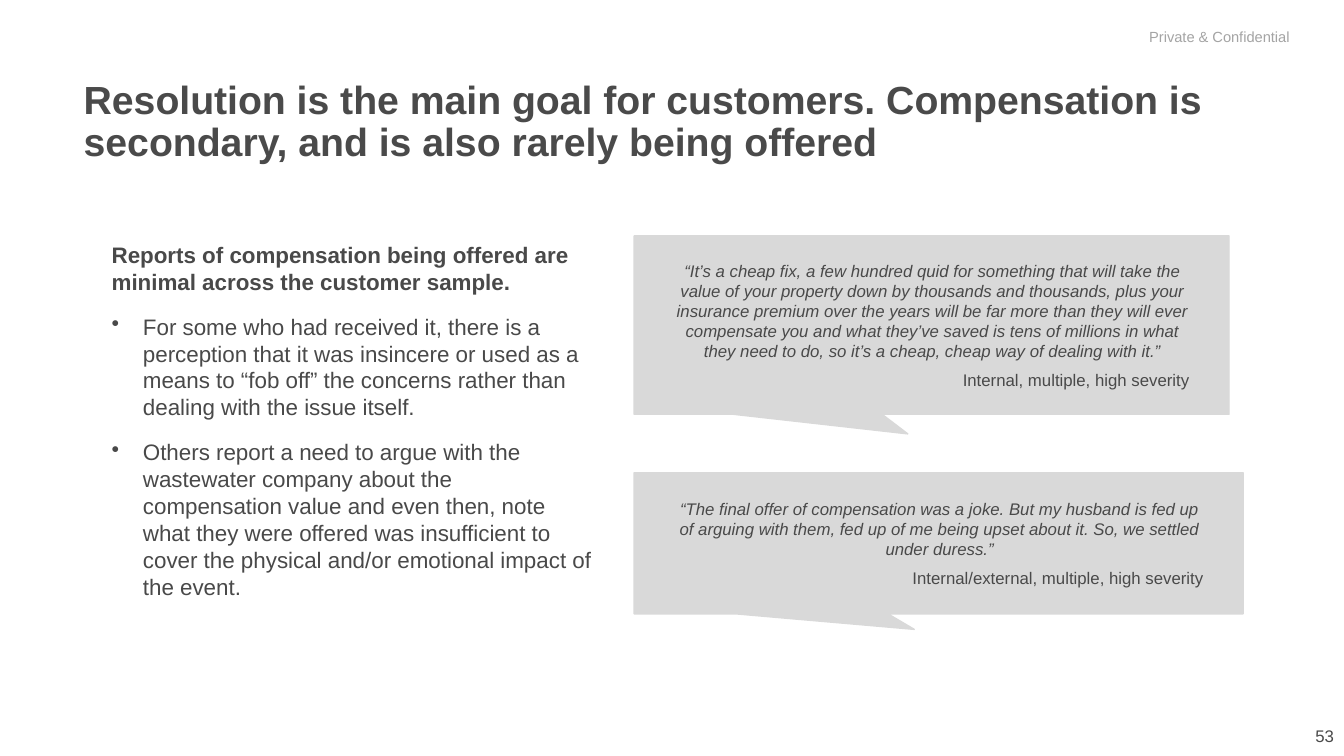
import pptx
import pptx.util
import pptx.dml.color
import pptx.enum.shapes
import pptx.enum.text
import pptx.oxml
import pptx.oxml.ns

Inches, Pt = pptx.util.Inches, pptx.util.Pt
ALIGN = pptx.enum.text.PP_ALIGN
ANCHOR = pptx.enum.text.MSO_ANCHOR
SHAPE = pptx.enum.shapes.MSO_SHAPE

TITLE = ("Resolution is the main goal for customers. Compensation is secondary, "
         "and is also rarely being offered")
LEAD = "Reports of compensation being offered are minimal across the customer sample."
POINTS = [
    "For some who had received it, there is a perception that it was insincere or used "
    "as a means to “fob off” the concerns rather than dealing with the issue itself.",
    "Others report a need to argue with the wastewater company about the compensation "
    "value and even then, note what they were offered was insufficient to cover the "
    "physical and/or emotional impact of the event.",
]
# top, width, height, words, speaker
QUOTES = [
    (2.34, 5.9, 1.77,
     "“It’s a cheap fix, a few hundred quid for something that will take the value of "
     "your property down by thousands and thousands, plus your insurance premium over "
     "the years will be far more than they will ever compensate you and what they’ve "
     "saved is tens of millions in what they need to do, so it’s a cheap, cheap way of "
     "dealing with it.”",
     "Internal, multiple, high severity"),
    (4.69, 6.04, 1.4,
     "“The final offer of compensation was a joke. But my husband is fed up of arguing "
     "with them, fed up of me being upset about it. So, we settled under duress.”",
     "Internal/external, multiple, high severity"),
]
QUOTE_LEFT = 6.29
TAIL = (-0.04, 0.61)
INK, BODY, PALE, GREY = "4A4A4A", "494949", "A4A4A4", "D9D9D9"


def color(code):
    return pptx.dml.color.RGBColor.from_string(code)


def place(shape, left, top, width, height):
    shape.left, shape.top = Inches(left), Inches(top)
    shape.width, shape.height = Inches(width), Inches(height)


def style(para, size, ink, bold=False, italic=False, align=ALIGN.LEFT):
    para.alignment = align
    for run in para.runs:
        font = run.font
        font.name, font.size = "Arial", Pt(size)
        font.bold, font.italic = bold, italic
        font.color.rgb = color(ink)


def fill(frame, lines, before, after):
    """Write one paragraph per line, with space between them."""
    frame.word_wrap = True
    frame.text = "\n".join(lines)
    for i, para in enumerate(frame.paragraphs):
        para.space_before = Pt(before if i else 0)
        para.space_after = Pt(after)
    return frame.paragraphs


def bullet(para):
    props = para._p.get_or_add_pPr()
    props.set("marL", str(Inches(0.31)))
    props.set("indent", str(-Inches(0.31)))
    mark = pptx.oxml.parse_xml(
        f'<a:buChar {pptx.oxml.ns.nsdecls("a")} char="•"/>')
    props.append(mark)


def label(slide, box, text, size, ink, align=ALIGN.LEFT):
    shape = slide.shapes.add_textbox(*map(Inches, box))
    frame = shape.text_frame
    frame.vertical_anchor = ANCHOR.MIDDLE
    style(fill(frame, [text], 0, 0)[0], size, ink, align=align)


def head(slide):
    title = slide.shapes.title
    place(title, 0.83, 0.75, 11.75, 0.87)
    frame = title.text_frame
    frame.auto_size = pptx.enum.text.MSO_AUTO_SIZE.NONE
    frame.vertical_anchor = ANCHOR.TOP
    frame.margin_left = 0
    para = fill(frame, [TITLE], 0, 0)[0]
    para.line_spacing = 0.9
    style(para, 28, INK, bold=True)


def report(slide):
    box = slide.shapes.add_textbox(*map(Inches, (1.01, 2.34, 4.96, 4.36)))
    lead, *points = fill(box.text_frame, [LEAD] + POINTS, 9, 4)
    style(lead, 16, BODY, bold=True)
    for para in points:
        bullet(para)
        style(para, 16, BODY)


def quote(slide, top, width, height, words, speaker):
    box = map(Inches, (QUOTE_LEFT, top, width, height))
    shape = slide.shapes.add_shape(SHAPE.RECTANGULAR_CALLOUT, *box)
    shape.adjustments[0], shape.adjustments[1] = TAIL
    shape.shadow.inherit = False
    shape.fill.solid()
    shape.fill.fore_color.rgb = color(GREY)
    shape.line.color.rgb = color(GREY)
    shape.line.width = Pt(1)
    frame = shape.text_frame
    frame.vertical_anchor = ANCHOR.MIDDLE
    frame.margin_left = frame.margin_right = Inches(0.39)
    frame.margin_top = frame.margin_bottom = Inches(0.39)
    said, who = fill(frame, [words, speaker], 4, 2)
    for para in (said, who):
        para._p.get_or_add_pPr().set("marL", str(Inches(0.02)))
    style(said, 12, BODY, italic=True, align=ALIGN.CENTER)
    style(who, 12, BODY, align=ALIGN.RIGHT)


def main():
    deck = pptx.Presentation()
    deck.slide_width, deck.slide_height = Inches(13.33), Inches(7.5)
    slide = deck.slides.add_slide(deck.slide_layouts[5])
    label(slide, (10.33, 7.1, 3, 0.4), "53", 12, INK, ALIGN.RIGHT)
    label(slide, (11.3, 0.19, 1.63, 0.35), "Private & Confidential", 10.5, PALE)
    head(slide)
    report(slide)
    for item in QUOTES:
        quote(slide, *item)
    deck.save("out.pptx")


if __name__ == "__main__":
    main()
